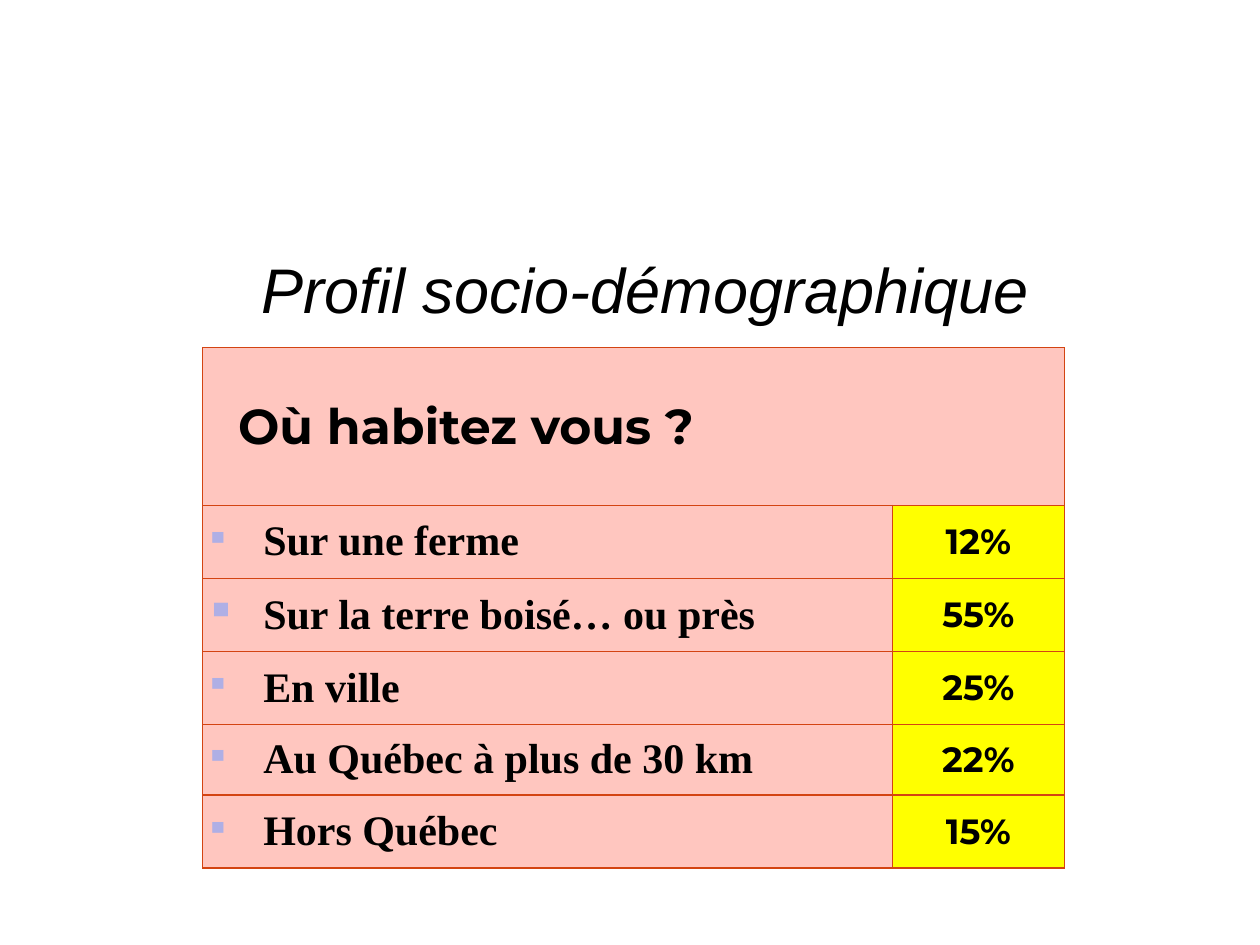
from lxml.etree import SubElement
from pptx import Presentation
from pptx.dml.color import RGBColor
from pptx.enum.text import MSO_ANCHOR, PP_ALIGN
from pptx.oxml import parse_xml
from pptx.oxml.ns import nsdecls, qn
from pptx.util import Inches, Pt

BLACK = RGBColor(0x00, 0x00, 0x00)
PINK = RGBColor(0xFF, 0xC6, 0xBF)
YELLOW = RGBColor(0xFF, 0xFF, 0x00)
RED = RGBColor(0xD3, 0x44, 0x12)
LAVENDER = RGBColor(0xAF, 0xAF, 0xE5)
GREY = RGBColor(0x80, 0x80, 0x80)

TITLE_BOX = (0.62, 1.66, 9, 1.25)
TABLE_BOX = (1.61, 2.76, 6.84, 4.15)
COLUMN_SHARES = (0.8, 0.2)
ROW_HEIGHTS = (1.25, 0.58, 0.58, 0.58, 0.56, 0.58)
QUESTION = "Où habitez vous ?"
ANSWERS = [
    ("Sur une ferme", "12%", 80),
    ("Sur la terre boisé… ou près", "55%", 100),
    ("En ville", "25%", 80),
    ("Au Québec à plus de 30 km", "22%", 80),
    ("Hors Québec", "15%", 80),
]


def write_text(frame, text, font, size, align=PP_ALIGN.LEFT, bold=False, italic=False):
    """Write one formatted paragraph and return its span."""
    para = frame.paragraphs[0]
    para.alignment = align
    span = para.add_run()
    span.text = text
    span.font.name = font
    span.font.size = Pt(size)
    span.font.bold = bold
    span.font.italic = italic
    span.font.color.rgb = BLACK
    return span


def add_text_shadow(span):
    """Give the letters a small grey shadow to the lower right."""
    fill = span.font._element.find(qn("a:solidFill"))
    fill.addnext(parse_xml(
        f'<a:effectLst {nsdecls("a")}>'
        '<a:outerShdw dist="25400" dir="2700000">'
        f'<a:srgbClr val="{GREY}"/></a:outerShdw></a:effectLst>'))


def add_bullet(para, size, indent):
    """Give a paragraph a small square bullet with a hanging indent."""
    properties = para._p.get_or_add_pPr()
    properties.set("marL", str(Inches(indent)))
    properties.set("indent", str(-Inches(indent)))
    color = SubElement(properties, qn("a:buClr"))
    SubElement(color, qn("a:srgbClr"), val=str(LAVENDER))
    SubElement(properties, qn("a:buSzPct"), val=str(size * 1000))
    SubElement(properties, qn("a:buChar"), char="▪")


def format_cell(cell, color):
    """Set the borders, fill, margins and anchor of a cell."""
    properties = cell._tc.get_or_add_tcPr()
    for side in ("lnL", "lnR", "lnT", "lnB"):
        line = SubElement(properties, qn(f"a:{side}"), w=str(Pt(0.75)))
        fill = SubElement(line, qn("a:solidFill"))
        SubElement(fill, qn("a:srgbClr"), val=str(RED))
    cell.fill.solid()
    cell.fill.fore_color.rgb = color
    cell.margin_left = cell.margin_right = Inches(0.02)
    cell.margin_top = cell.margin_bottom = Inches(0.02)
    cell.vertical_anchor = MSO_ANCHOR.MIDDLE


def place_title(page, box):
    """Place the shadowed italic title in its box."""
    title = page.shapes.title
    title.left, title.top, title.width, title.height = map(Inches, box)
    title.text_frame.vertical_anchor = MSO_ANCHOR.MIDDLE
    span = write_text(title.text_frame, "Profil socio-démographique", "Arial", 36,
                      align=PP_ALIGN.CENTER, italic=True)
    add_text_shadow(span)


def place_table(page, box):
    """Place the question and the share of each answer in the box."""
    table = page.shapes.add_table(len(ROW_HEIGHTS), len(COLUMN_SHARES),
                                  *map(Inches, box)).table
    for column, share in zip(table.columns, COLUMN_SHARES):
        column.width = Inches(box[2] * share)
    for row, height in zip(table.rows, ROW_HEIGHTS):
        row.height = Inches(height)
    for row in range(len(ROW_HEIGHTS)):
        format_cell(table.cell(row, 0), PINK)
        format_cell(table.cell(row, 1), YELLOW if row else PINK)

    heading = table.cell(0, 0)
    heading.merge(table.cell(0, 1))
    heading.margin_left = Inches(0.28)
    write_text(heading.text_frame, QUESTION, "Montserrat", 28, bold=True)

    for row, (answer, share, bullet_size) in enumerate(ANSWERS, start=1):
        label = table.cell(row, 0).text_frame
        add_bullet(label.paragraphs[0], bullet_size, 0.46)
        write_text(label, answer, "Times New Roman", 24, bold=True)
        write_text(table.cell(row, 1).text_frame, share, "Montserrat", 20,
                   align=PP_ALIGN.CENTER, bold=True)


def main():
    """Build the deck and save it."""
    deck = Presentation()
    deck.slide_width, deck.slide_height = Inches(10), Inches(7.5)
    page = deck.slides.add_slide(deck.slide_layouts[5])
    place_title(page, TITLE_BOX)
    place_table(page, TABLE_BOX)
    deck.save("out.pptx")


if __name__ == "__main__":
    main()
